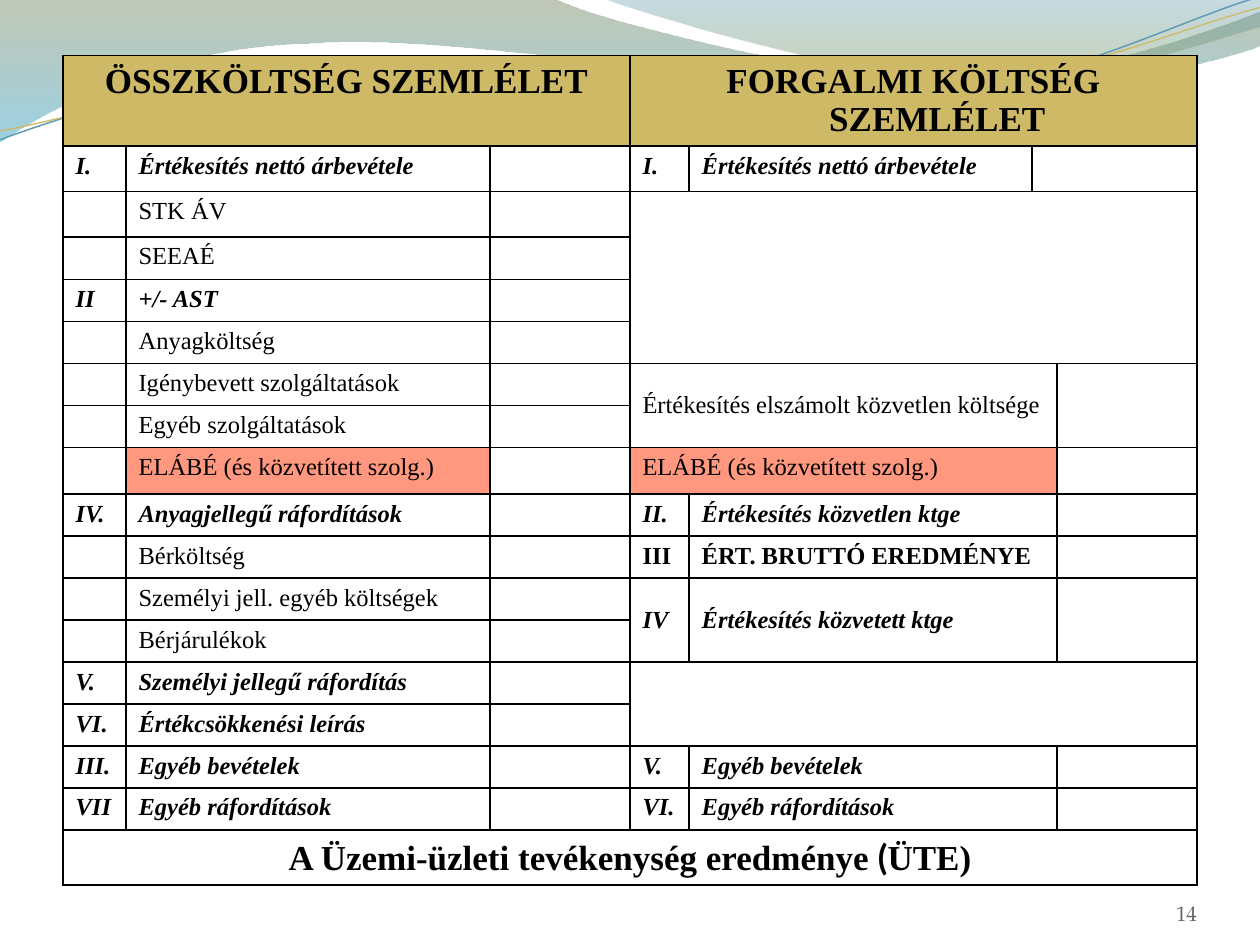
from dataclasses import dataclass
from math import cos, radians, sin

from lxml import etree
from pptx import Presentation
from pptx.dml.color import RGBColor
from pptx.enum import text
from pptx.oxml.ns import qn
from pptx.util import Inches, Pt


@dataclass(frozen=True)
class Theme:
    ink: str = "000000"
    gold: str = "CEB966"
    teal: str = "5E9CB1"
    red: str = "FF3300"
    grey: str = "646268"
    font: str = "Times New Roman"
    paren_font: str = "Lato"
    number_font: str = "TeX Gyre Pagella"
    title: int = 20
    body: int = 14
    empty: int = 12
    number: int = 12


T = Theme()
COLS = [0.5, 2.89, 1.11, 0.47, 2.72, 0.2, 1.11]
ROWS = [0.72, 0.36, 0.36, 0.34] + [1 / 3] * 4 + [0.37] + [1 / 3] * 8 + [0.44]
TILT = 2.7
PIVOT = (5, 0.58)
ELABE = "ELÁBÉ (és közvetített szolg.)"

LEFT = [
    ("I.", "Értékesítés nettó árbevétele"),
    ("", "STK ÁV"),
    ("", "SEEAÉ"),
    ("II", "+/- AST"),
    ("", "Anyagköltség"),
    ("", "Igénybevett szolgáltatások"),
    ("", "Egyéb szolgáltatások"),
    ("", ELABE),
    ("IV.", "Anyagjellegű ráfordítások"),
    ("", "Bérköltség"),
    ("", "Személyi jell. egyéb költségek"),
    ("", "Bérjárulékok"),
    ("V.", "Személyi jellegű ráfordítás"),
    ("VI.", "Értékcsökkenési leírás"),
    ("III.", "Egyéb bevételek"),
    ("VII", "Egyéb ráfordítások"),
]
RIGHT = [
    (1, 1, "I.", "Értékesítés nettó árbevétele"),
    (6, 2, "", "Értékesítés elszámolt közvetlen költsége"),
    (8, 1, "", ELABE),
    (9, 1, "II.", "Értékesítés közvetlen ktge"),
    (10, 1, "III", "ÉRT. BRUTTÓ EREDMÉNYE"),
    (11, 2, "IV", "Értékesítés közvetett ktge"),
    (15, 1, "V.", "Egyéb bevételek"),
    (16, 1, "VI.", "Egyéb ráfordítások"),
]
BLANK_BLOCKS = [(2, 4), (13, 2)]

WAVES = [
    ((0, 0), [
        [(4.4, -0.01)],
        [(4.76, 0.17), (6.64, 0.63), (7.58, 0.63)],
        [(8.53, 0.63), (9.58, 0.26), (10, 0.09)],
        [(10.01, 0.36)],
        [(9.83, 0.44), (8.7, 0.76), (7.46, 0.75)],
        [(6.22, 0.75), (3.82, 0.28), (2.57, 0.34)],
        [(1.29, 0.36), (0.46, 0.83), (-0.01, 1.13)],
        [(0, 0)],
    ], [(0, "74855E", 45), (100, "4AACCE", 55)]),
    ((4.79, -0.01), [
        [(5.09, 0.11), (6.82, 0.62), (7.69, 0.65)],
        [(8.56, 0.69), (9.61, 0.32), (10, 0.21)],
        [(10, 0)],
        [(4.79, -0.01)],
    ], [(0, "45889F", 30), (80, "8AA36D", 45)]),
]
STRANDS = [
    ((0, 1.11), [
        [(0.48, 0.93), (1.58, 0.57), (2.77, 0.52)],
        [(3.95, 0.47), (5.93, 0.89), (7.13, 0.8)],
        [(8.33, 0.71), (9.38, 0.15), (9.98, -0.02)],
    ], T.teal, 0.85),
    ((0, 1.04), [
        [(0.47, 0.96), (1.64, 0.61), (2.83, 0.56)],
        [(4.03, 0.51), (5.97, 0.84), (7.17, 0.75)],
        [(8.36, 0.67), (9.41, 0.21), (10, 0.06)],
    ], T.gold, 0.75),
]


def rgb(value):
    return RGBColor.from_string(value)


def add_color(parent, value, alpha=100):
    color = etree.SubElement(parent, qn("a:srgbClr"), val=value)
    if alpha < 100:
        etree.SubElement(color, qn("a:alpha"), val=str(alpha * 1000))


def add_curve(s, start, segments, close):
    corners = [(Inches(x), Inches(y)) for x, y in [start] + [seg[-1] for seg in segments]]
    builder = s.shapes.build_freeform(*corners[0])
    builder.add_line_segments(corners[1:], close=close)
    shape = builder.convert_to_shape()
    shape.shadow.inherit = False
    left, top = (min(axis) for axis in zip(*corners))
    for straight, seg in zip(list(shape._element.iter(qn("a:lnTo"))), segments):
        if len(seg) == 3:
            bend = etree.Element(qn("a:cubicBezTo"))
            for x, y in seg:
                etree.SubElement(bend, qn("a:pt"), x=str(Inches(x) - left), y=str(Inches(y) - top))
            straight.getparent().replace(straight, bend)
    return shape


def add_wave(s, start, segments, stops):
    shape = add_curve(s, start, segments, True)
    shape.line.fill.background()
    shape.fill.gradient()
    grad = shape.fill._xPr.find(qn("a:gradFill"))
    for child in list(grad):
        grad.remove(child)
    stop_list = etree.SubElement(grad, qn("a:gsLst"))
    for position, value, alpha in stops:
        add_color(etree.SubElement(stop_list, qn("a:gs"), pos=str(position * 1000)), value, alpha)
    etree.SubElement(grad, qn("a:lin"), ang="5400000", scaled="0")


def turn(point):
    angle = radians(TILT)
    x, y = point[0] - PIVOT[0], point[1] - PIVOT[1]
    return (PIVOT[0] + x * cos(angle) - y * sin(angle),
            PIVOT[1] + x * sin(angle) + y * cos(angle))


def add_strand(s, start, segments, color, width):
    level = [[turn(point) for point in seg] for seg in segments]
    shape = add_curve(s, turn(start), level, False)
    shape.rotation = 360 - TILT
    shape.fill.background()
    shape.line.color.rgb = rgb(color)
    shape.line.width = Pt(width)


def style_run(r, size, color, font, bold=False, italic=False):
    r.font.size, r.font.name = Pt(size), font
    r.font.bold, r.font.italic = bold, italic
    r.font.color.rgb = rgb(color)


def reset_cell(cell):
    props = cell._tc.get_or_add_tcPr()
    for side in ("lnL", "lnR", "lnT", "lnB"):
        line = etree.SubElement(props, qn(f"a:{side}"), w=str(Pt(1)))
        add_color(etree.SubElement(line, qn("a:solidFill")), T.ink)
    cell.fill.background()
    end = etree.SubElement(cell.text_frame.paragraphs[0]._p, qn("a:endParaRPr"))
    end.set("sz", str(T.empty * 100))


def fill_cell(cell, color, alpha=100):
    cell.fill.solid()
    cell.fill.fore_color.rgb = rgb(color)
    if alpha < 100:
        value = cell._tc.tcPr.find(qn("a:solidFill"))[0]
        etree.SubElement(value, qn("a:alpha"), val=str(alpha * 1000))


def write_cell(cell, words, size=T.body, bold=False, italic=False, center=False):
    p = cell.text_frame.paragraphs[0]
    props = p._p.get_or_add_pPr()
    props.set("marL", str(Inches(0.38)))
    props.set("indent", str(-Inches(0.38)))
    if center:
        p.alignment = text.PP_ALIGN.CENTER
    for part, font in words if isinstance(words, list) else [(words, T.font)]:
        r = p.add_run()
        r.text = part
        style_run(r, size, T.ink, font, bold, italic)
    if words == ELABE:
        fill_cell(cell, T.red, 50)


def merge(table, row, col, height, width):
    cell = table.cell(row, col)
    if height * width > 1:
        cell.merge(table.cell(row + height - 1, col + width - 1))
    return cell


def add_cost_table(s):
    frame = s.shapes.add_table(len(ROWS), len(COLS), Inches(0.5), Inches(0.44),
                               Inches(sum(COLS)), Inches(sum(ROWS)))
    table = frame.table
    table.first_row = table.horz_banding = False
    for column, width in zip(table.columns, COLS):
        column.width = Inches(width)
    for row, height in zip(table.rows, ROWS):
        row.height = Inches(height)
    for cell in table.iter_cells():
        reset_cell(cell)

    for col, width, title in ((0, 3, "ÖSSZKÖLTSÉG SZEMLÉLET"), (3, 4, "FORGALMI KÖLTSÉG SZEMLÉLET")):
        cell = merge(table, 0, col, 1, width)
        write_cell(cell, title, T.title, bold=True, center=True)
        fill_cell(cell, T.gold)

    for row, (numeral, label) in enumerate(LEFT, 1):
        strong = bool(numeral)
        if strong:
            write_cell(table.cell(row, 0), numeral, bold=True, italic=True)
        write_cell(table.cell(row, 1), label, bold=strong, italic=strong)

    for row, height, numeral, label in RIGHT:
        strong = bool(numeral)
        italic = strong and not label.isupper()
        first = 4 if strong else 3
        last = 4 if row == 1 else 5
        cells = [merge(table, row, first, height, last - first + 1)]
        write_cell(cells[0], label, bold=strong, italic=italic)
        if strong:
            cells.append(merge(table, row, 3, height, 1))
            write_cell(cells[1], numeral, bold=True, italic=italic)
        merge(table, row, last + 1, height, 6 - last)
        if height > 1:
            for cell in cells:
                cell.vertical_anchor = text.MSO_ANCHOR.MIDDLE

    for row, height in BLANK_BLOCKS:
        merge(table, row, 3, height, 4)
    result = [("A Üzemi-üzleti tevékenység eredménye", T.font), (" (", T.paren_font), ("ÜTE)", T.font)]
    write_cell(merge(table, len(ROWS) - 1, 0, 1, 7), result, T.title, bold=True, center=True)


def add_page_number(s, number):
    tf = s.shapes.add_textbox(Inches(8.67), Inches(6.95), Inches(0.83), Inches(0.4)).text_frame
    tf.word_wrap = True
    tf.margin_left = tf.margin_right = tf.margin_top = tf.margin_bottom = 0
    tf.vertical_anchor = text.MSO_ANCHOR.BOTTOM
    tf.text = number
    p = tf.paragraphs[0]
    p.alignment = text.PP_ALIGN.RIGHT
    style_run(p.runs[0], T.number, T.grey, T.number_font)


def main():
    prs = Presentation()
    prs.slide_width, prs.slide_height = Inches(10), Inches(7.5)
    s = prs.slides.add_slide(prs.slide_layouts[6])
    for wave in WAVES:
        add_wave(s, *wave)
    for strand in STRANDS:
        add_strand(s, *strand)
    add_cost_table(s)
    add_page_number(s, "14")
    prs.save("out.pptx")


if __name__ == "__main__":
    main()
